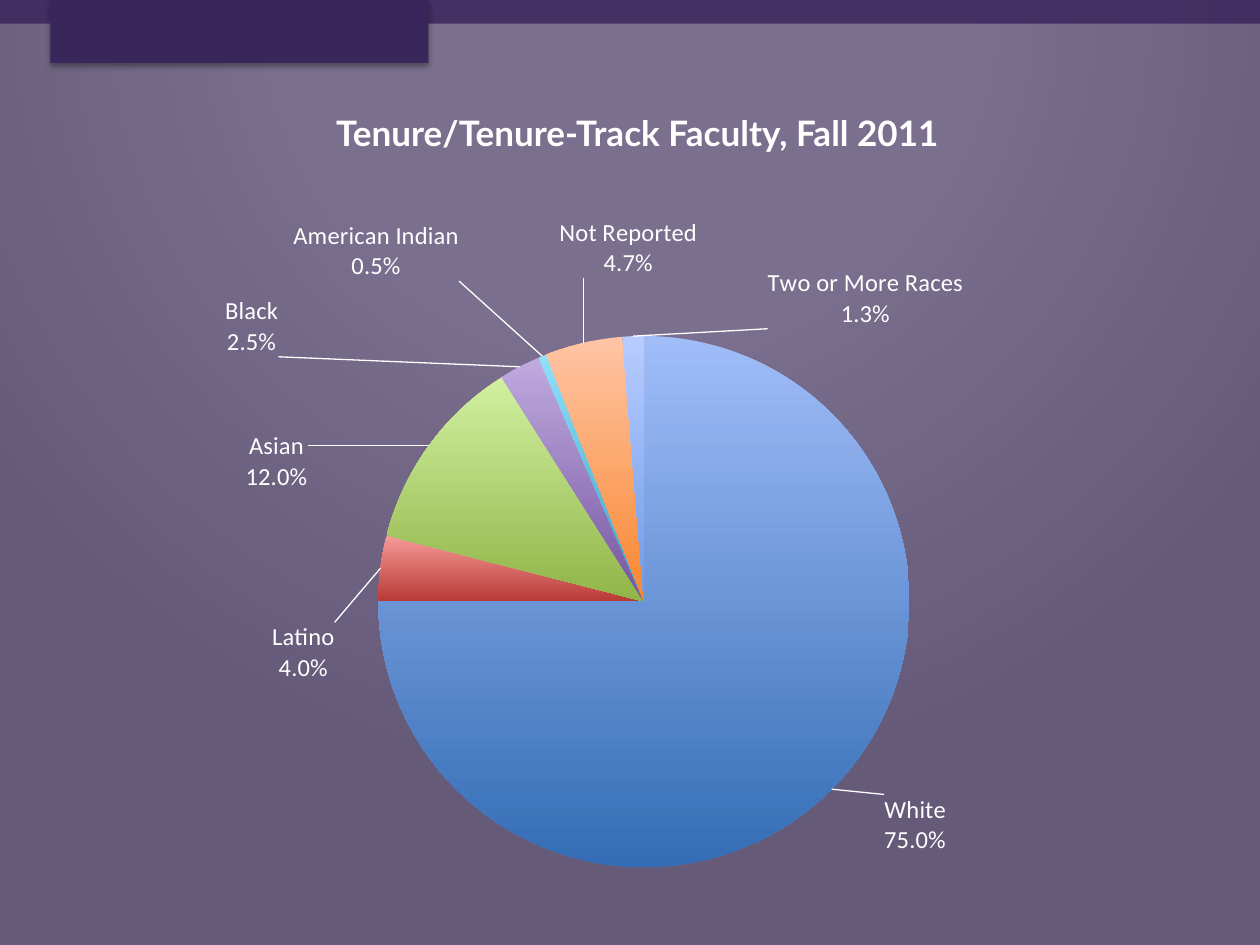
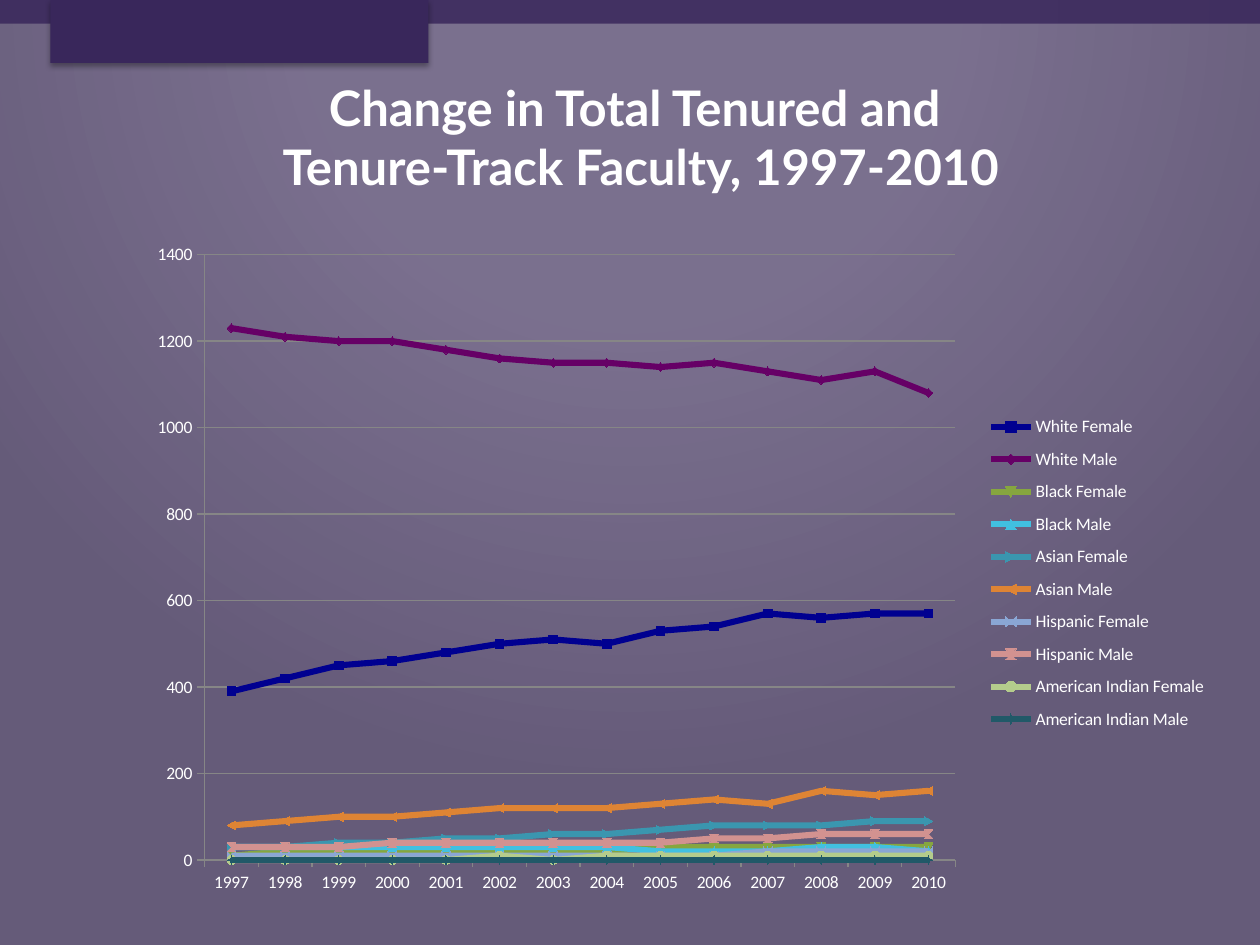
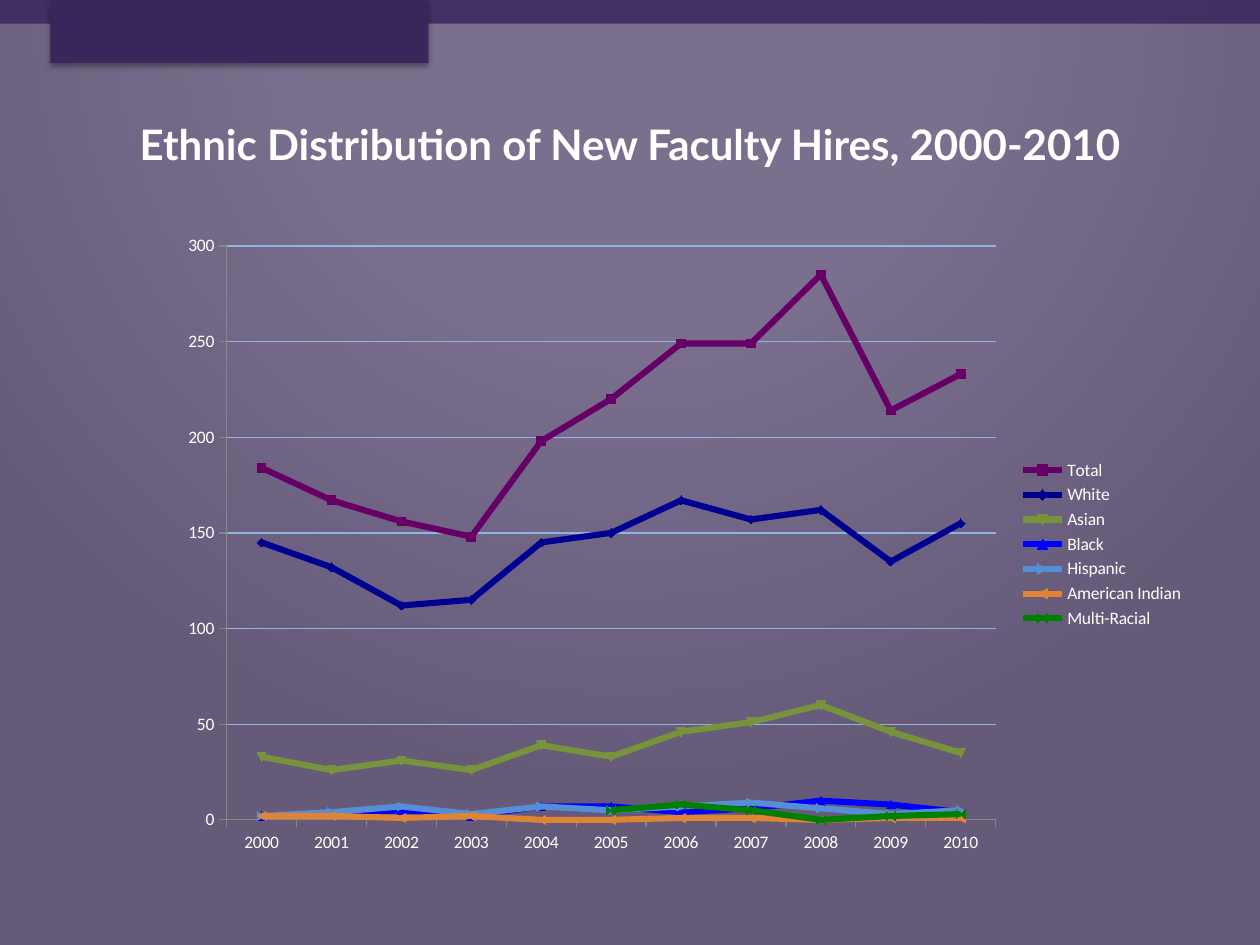
from dataclasses import dataclass

from pptx import Presentation
from pptx.chart.data import CategoryChartData as Data
from pptx.dml.color import RGBColor as RGB
from pptx.enum.chart import XL_CHART_TYPE as Kind
from pptx.enum.chart import XL_LABEL_POSITION as Spot
from pptx.enum.chart import XL_LEGEND_POSITION as Side
from pptx.enum.chart import XL_TICK_MARK as Tick
from pptx.enum.shapes import MSO_SHAPE as Form
from pptx.enum.text import MSO_ANCHOR as Anchor
from pptx.enum.text import MSO_AUTO_SIZE as Fit
from pptx.enum.text import PP_ALIGN as Align
from pptx.oxml import parse_xml
from pptx.oxml.ns import nsdecls, qn
from pptx.util import Pt


@dataclass(frozen=True)
class Theme:
    head: str = "Lato"
    body: str = "Calibri"
    text: str = "FFFFFF"
    purple: str = "39275B"
    light: str = "D9D9D9"
    dark: str = "A6A6A6"
    axis: str = "868686"
    small: int = 10
    label: int = 14
    line: float = 3.5
    thin: float = 0.75
    mark: int = 5


THEME = Theme()

# Slice: label, share, top colour, bottom colour, label shift in points
SLICES = [
    ("White", 0.75, "A0BDF8", "346DB5", (27, 0)),
    ("Latino", 0.04, "F69A98", "B93A36", (-22, 66)),
    ("Asian", 0.12, "D2F0A0", "90B548", (-66, 29)),
    ("Black", 0.025, "C0AADF", "7455A0", (-136, -2)),
    ("American Indian", 0.005, "90E0FA", "3AA0C0", (-46, -39)),
    ("Not Reported", 0.047, "FFC5A5", "F8862F", (66, -33)),
    ("Two or More Races", 0.013, "B8CCFF", "6D9AE8", (133, 0)),
]

# Series: name, colour, values
STAFF = [
    ("White Female", "000090",
     [390, 420, 450, 460, 480, 500, 510, 500, 530, 540, 570, 560, 570, 570]),
    ("White Male", "660066",
     [1230, 1210, 1200, 1200, 1180, 1160, 1150, 1150, 1140, 1150, 1130, 1110,
      1130, 1080]),
    ("Black Female", "86A63F",
     [10, 20, 20, 20, 20, 20, 20, 20, 30, 30, 30, 30, 30, 30]),
    ("Black Male", "41C0E0",
     [30, 30, 30, 30, 30, 30, 30, 30, 20, 20, 20, 30, 30, 20]),
    ("Asian Female", "3A96AF",
     [30, 30, 40, 40, 50, 50, 60, 60, 70, 80, 80, 80, 90, 90]),
    ("Asian Male", "DE8434",
     [80, 90, 100, 100, 110, 120, 120, 120, 130, 140, 130, 160, 150, 160]),
    ("Hispanic Female", "8AA6D4",
     [10, 10, 10, 10, 10, 10, 10, 10, 10, 10, 20, 20, 20, 20]),
    ("Hispanic Male", "D29290",
     [30, 30, 30, 40, 40, 40, 40, 40, 40, 50, 50, 60, 60, 60]),
    ("American Indian Female", "B4CC8C",
     [0, 0, 0, 0, 0, 10, 0, 10, 10, 10, 10, 10, 10, 10]),
    ("American Indian Male", "215968", [0] * 14),
]

HIRES = [
    ("Total", "660066",
     [184, 167, 156, 148, 198, 220, 249, 249, 285, 214, 233]),
    ("White", "000090",
     [145, 132, 112, 115, 145, 150, 167, 157, 162, 135, 155]),
    ("Asian", "77933C", [33, 26, 31, 26, 39, 33, 46, 51, 60, 46, 35]),
    ("Black", "0000FF", [2, 3, 5, 2, 7, 7, 4, 6, 10, 8, 4]),
    ("Hispanic", "558ED5", [2, 4, 7, 3, 7, 5, 7, 9, 6, 3, 5]),
    ("American Indian", "DE8434", [2, 2, 1, 2, 0, 0, 1, 1, 0, 1, 1]),
    ("Multi-Racial", "008000", [None] * 5 + [5, 8, 5, 0, 2, 3]),
]


def rgb(code):
    return RGB.from_string(code)


def style(font, size, name=THEME.body, bold=None):
    font.name, font.size, font.bold = name, Pt(size), bold
    font.color.rgb = rgb(THEME.text)


# Shared backdrop
def back(master):
    master.background.fill.gradient()
    grad = master.element.find(".//" + qn("a:gradFill"))
    stops = "".join(
        f'<a:gs pos="{pos}000"><a:srgbClr val="{code}"/></a:gs>'
        for pos, code in [(0, THEME.light), (40, THEME.light), (100, THEME.dark)])
    grad.getparent().replace(grad, parse_xml(
        f'<a:gradFill {nsdecls("a")} rotWithShape="1"><a:gsLst>{stops}</a:gsLst>'
        '<a:path path="circle"><a:fillToRect l="50000" t="-80000" r="50000" '
        'b="180000"/></a:path></a:gradFill>'))


def band(slide, master, rank, at, alpha=100, shade=False):
    """Make a purple band and move it behind everything on the master."""
    shape = slide.shapes.add_shape(Form.RECTANGLE, *map(Pt, at))
    shape.shadow.inherit = False
    shape.fill.solid()
    shape.fill.fore_color.rgb = rgb(THEME.purple)
    shape.line.fill.background()
    node = shape.element
    if alpha < 100:
        node.find(".//" + qn("a:srgbClr")).append(parse_xml(
            f'<a:alpha {nsdecls("a")} val="{alpha}000"/>'))
    if shade:
        node.find(".//" + qn("a:effectLst")).append(parse_xml(
            f'<a:outerShdw {nsdecls("a")} blurRad="{Pt(3.1)}" '
            f'dist="{Pt(1.8)}" dir="5400000" rotWithShape="0">'
            '<a:srgbClr val="000000"><a:alpha val="35000"/></a:srgbClr>'
            '</a:outerShdw>'))
    node.find(".//" + qn("p:cNvPr")).set("id", str(100 + rank))
    master.shapes.element.insert(2 + rank, node)


# Slide title
def head(slide, text, at, size):
    title = slide.shapes.title
    title.left, title.top, title.width, title.height = map(Pt, at)
    frame = title.text_frame
    frame.text = text
    frame.word_wrap = True
    frame.auto_size = Fit.NONE
    frame.vertical_anchor = Anchor.MIDDLE
    para = frame.paragraphs[0]
    para.alignment = Align.CENTER
    style(para.font, size, THEME.head, True)


# Chart parts
def place(node, rank, vals, modes=""):
    """Give a chart part a manual layout, as shares of the chart's size."""
    for old in node.findall(qn("c:layout")):
        node.remove(old)
    spots = "".join(f'<c:{key} val="{val:.4f}"/>' for key, val in zip("xywh", vals))
    node.insert(rank, parse_xml(
        f'<c:layout {nsdecls("c")}><c:manualLayout>{modes}{spots}'
        '</c:manualLayout></c:layout>'))


def pin(node, rank, at, box, inner=False):
    """Place a chart part at a box given in slide points."""
    left, top, wide, high = at
    x, y, w, h = box
    target = '<c:layoutTarget val="inner"/>' if inner else ""
    place(node, rank,
          ((x - left) / wide, (y - top) / high, w / wide, h / high),
          target + '<c:xMode val="edge"/><c:yMode val="edge"/>')


def graph(slide, kind, cats, rows, at, plot, form="General"):
    data = Data(number_format=form)
    data.categories = cats
    for name, vals in rows:
        data.add_series(name, vals)
    chart = slide.shapes.add_chart(kind, *map(Pt, at), data).chart
    chart.has_title = False
    chart.has_legend = False
    style(chart.font, THEME.small)
    pin(chart.element.find(".//" + qn("c:plotArea")), 0, at, plot, True)
    return chart


def pie(slide, at, plot):
    cats = [str(num) for num in range(1, len(SLICES) + 1)]
    shares = [row[1] for row in SLICES]
    chart = graph(slide, Kind.PIE, cats, [("Series 1", shares)], at, plot, "0.0%")
    chart.plots[0].vary_by_categories = True
    series = chart.plots[0].series[0]
    labels = series.data_labels
    labels.show_value = True
    labels.number_format = "0.0%"
    labels.number_format_is_linked = False
    labels.position = Spot.OUTSIDE_END
    style(labels.font, THEME.label)

    for num, (name, share, top, low, shift) in enumerate(SLICES):
        point = series.points[num]
        fill = point.format.fill
        fill.gradient()
        fill.gradient_angle = 270
        for stop, code in zip(fill.gradient_stops, (top, low)):
            stop.color.rgb = rgb(code)
        label = point.data_label
        frame = label.text_frame
        frame.text = f"{name}\n{share:.1%}"
        frame.word_wrap = False
        for para in frame.paragraphs:
            style(para.runs[0].font, THEME.label)
        label.position = Spot.OUTSIDE_END

    for node, row in zip(chart.element.iter(qn("c:dLbl")), SLICES):
        place(node, 1, (row[4][0] / at[2], row[4][1] / at[3]))
    chart.element.find(".//" + qn("c:dLbls")).append(parse_xml(
        f'<c:leaderLines {nsdecls("c", "a")}><c:spPr><a:ln w="{Pt(THEME.thin)}">'
        f'<a:solidFill><a:srgbClr val="{THEME.text}"/></a:solidFill></a:ln>'
        '</c:spPr></c:leaderLines>'))


def rule(form, code, width=THEME.thin):
    form.line.color.rgb = rgb(code)
    form.line.width = Pt(width)


def trend(slide, first, rows, at, plot, top, step, grid, key=None):
    years = [str(first + num) for num in range(len(rows[0][2]))]
    chart = graph(slide, Kind.LINE_MARKERS, years,
                  [(name, vals) for name, _, vals in rows], at, plot)
    chart.plots[0].vary_by_categories = False
    for series, (_, code, _) in zip(chart.plots[0].series, rows):
        series.smooth = False
        rule(series.format, code, THEME.line)
        mark = series.marker
        mark.size = THEME.mark
        mark.format.fill.solid()
        mark.format.fill.fore_color.rgb = rgb(code)
        rule(mark.format, code)

    # Axes
    for axis in (chart.category_axis, chart.value_axis):
        axis.major_tick_mark = Tick.OUTSIDE
        axis.minor_tick_mark = Tick.NONE
        rule(axis.format, THEME.axis)
        style(axis.tick_labels.font, THEME.small)
    scale = chart.value_axis
    scale.minimum_scale, scale.maximum_scale = 0, top
    scale.major_unit = step
    scale.has_major_gridlines = True
    rule(scale.major_gridlines.format, grid)

    # Legend
    chart.has_legend = True
    legend = chart.legend
    legend.position = Side.RIGHT
    legend.include_in_layout = False
    style(legend.font, THEME.small)
    if key:
        pin(chart.element.find(".//" + qn("c:legend")), 1, at, key)


def main():
    deck = Presentation()
    deck.slide_width, deck.slide_height = Pt(720), Pt(540)
    master = deck.slide_master
    one, two, three = [deck.slides.add_slide(deck.slide_layouts[5])
                       for _ in range(3)]

    # Backdrop
    back(master)
    band(one, master, 0, (0, 0, 720, 540), alpha=59)
    band(one, master, 1, (0, 0, 720, 13.5), alpha=85)
    band(one, master, 2, (28.8, 0, 216, 36), shade=True)

    # Faculty shares
    head(one, "Tenure/Tenure-Track Faculty, Fall 2011",
         (37.5, 57.6, 653.5, 36), 20)
    pie(one, (84, 94.5, 565, 402), (141, 192, 454, 303.5))

    # Faculty over time
    head(two, "Change in Total Tenured and \vTenure-Track Faculty, 1997-2010",
         (24, 36, 684, 84), 28)
    trend(two, 1997, STAFF, (78, 132, 614, 386), (117, 145.5, 429, 346),
          1400, 200, THEME.axis, key=(563, 231, 128, 193))

    # New hires
    head(three, "Ethnic Distribution of New Faculty Hires, 2000-2010",
         (54, 48, 612, 68), 24)
    trend(three, 2000, HIRES, (96, 128, 588, 366), (129.5, 140.5, 439.5, 328),
          300, 50, "8EB4E3")

    deck.save("out.pptx")


if __name__ == "__main__":
    main()
